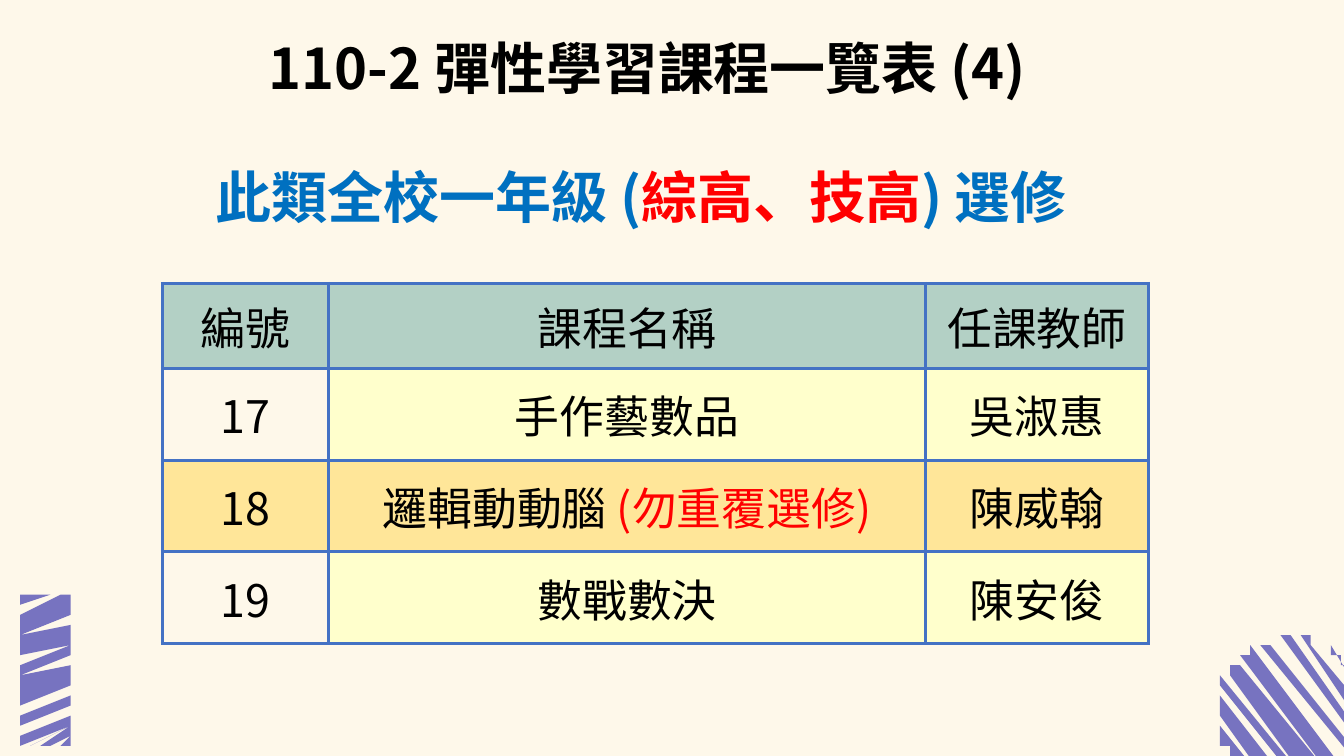
import math
from dataclasses import dataclass

from lxml import etree
from pptx import Presentation
from pptx.dml.color import RGBColor
from pptx.enum.text import MSO_ANCHOR, MSO_AUTO_SIZE, PP_ALIGN
from pptx.oxml.ns import qn
from pptx.util import Inches, Pt

CENTER = PP_ALIGN.CENTER
TOP = MSO_ANCHOR.TOP
MIDDLE = MSO_ANCHOR.MIDDLE
NO_AUTOFIT = MSO_AUTO_SIZE.NONE

IVORY = RGBColor(0xFE, 0xF8, 0xEA)
VIOLET = RGBColor(0x77, 0x73, 0xC0)
BLACK = RGBColor(0, 0, 0)
RED = RGBColor(0xFF, 0, 0)
BLUE = RGBColor(0, 0x70, 0xC0)
BORDER_BLUE = RGBColor(0x44, 0x72, 0xC4)
SAGE = RGBColor(0xB3, 0xD0, 0xC5)
LEMON = RGBColor(0xFF, 0xFF, 0xCC)
AMBER = RGBColor(0xFF, 0xE6, 0x99)
FONT = "Noto Sans CJK SC"
UNIT = Inches(0.1)

Point = tuple[float, float]


@dataclass(frozen=True)
class Phrase:
    text: str
    color: RGBColor = BLACK


@dataclass(frozen=True)
class Area:
    column: float
    row: float
    columns: float
    rows: float

    def place(self) -> tuple[int, int, int, int]:
        return grid(self.column), grid(self.row), grid(self.columns), grid(self.rows)


@dataclass(frozen=True)
class Heading:
    area: Area
    phrases: tuple[Phrase, ...]
    line_spacing: float
    top_inset: float


@dataclass(frozen=True)
class CourseRow:
    height: float
    inset: float
    fills: tuple[RGBColor, ...]
    cells: tuple[tuple[Phrase, ...], ...]


@dataclass(frozen=True)
class Stripe:
    start: float
    width: float


TITLE = Heading(Area(17.6, 4, 93.2, 9.1), (Phrase("110-2 彈性學習課程一覽表 (4)"),), 0.9, 0.1)
AUDIENCE = Heading(
    Area(5.5, 14.1, 116.2, 10.6),
    (Phrase("此類全校一年級 (", BLUE), Phrase("綜高、技高", RED), Phrase(") 選修", BLUE)),
    1.15, 1)

COURSE_COLUMNS = (16.5, 59.2, 22.1)
PLAIN_FILLS = (IVORY, LEMON, LEMON)
COURSES = (
    CourseRow(7, 1, (SAGE,) * 3, ((Phrase("編號"),), (Phrase("課程名稱"),), (Phrase("任課教師"),))),
    CourseRow(9.1, 0.1, PLAIN_FILLS, ((Phrase("17"),), (Phrase("手作藝數品"),), (Phrase("吳淑惠"),))),
    CourseRow(9.1, 0.1, (AMBER,) * 3,
              ((Phrase("18"),), (Phrase("邏輯動動腦 "), Phrase("(勿重覆選修)", RED)), (Phrase("陳威翰"),))),
    CourseRow(9.1, 0.1, PLAIN_FILLS, ((Phrase("19"),), (Phrase("數戰數決"),), (Phrase("陳安俊"),))),
)

BAR = Area(1.8, 59, 4.8, 14.5)
BAR_SLOPE = 1.95
BAR_STRIPES = tuple(Stripe(*stripe) for stripe in (
    (57.4, 0.5), (58, 0.4), (58.6, 0.4), (59.2, 0.7), (60.1, 0.5), (60.8, 0.5), (61.5, 0.5),
    (62.2, 0.6), (63, 0.5), (63.7, 0.3), (64.3, 0.4), (64.9, 0.4), (65.5, 0.6), (66.3, 0.3),
    (66.8, 0.3), (67.3, 0.4), (67.9, 0.5), (68.6, 0.4), (69.2, 0.6), (70, 0.4), (70.6, 0.4),
    (71.3, 0.3), (71.9, 0.3), (72.5, 0.5), (73.2, 0.3)))

DISC_CENTER = (127.95, 70.6)
DISC_RADIUS = 7.35
DISC_ANGLE = math.radians(52)
DISC_STRIPES = tuple(Stripe(*stripe) for stripe in (
    (-7.35, 0.75), (-5.84, 1.07), (-4.06, 0.93), (-2.38, 1.24), (-0.29, 1.22),
    (1.72, 0.98), (3.45, 0.93), (5.17, 0.74), (6.8, 0.55)))
ARC_STEPS = 8


def grid(count: float) -> int:
    return round(count * UNIT)


def clip_rows(outline: list[Point], limit: float, side: int) -> list[Point]:
    kept: list[Point] = []
    for (x0, y0), (x1, y1) in zip(outline, outline[1:] + outline[:1]):
        inside, next_inside = side * (y0 - limit) >= 0, side * (y1 - limit) >= 0
        if inside:
            kept.append((x0, y0))
        if inside != next_inside:
            kept.append((x0 + (x1 - x0) * (limit - y0) / (y1 - y0), limit))
    return kept


def bar_outline(stripe: Stripe) -> list[Point]:
    left, right = BAR.column, BAR.column + BAR.columns
    end = stripe.start + stripe.width
    band = [(right, stripe.start), (right, end),
            (left, end + BAR_SLOPE), (left, stripe.start + BAR_SLOPE)]
    return clip_rows(clip_rows(band, BAR.row, 1), BAR.row + BAR.rows, -1)


def disc_outline(stripe: Stripe) -> list[Point]:
    low = math.asin(stripe.start / DISC_RADIUS)
    high = math.asin(min(1, (stripe.start + stripe.width) / DISC_RADIUS))
    arc = [low + (high - low) * step / ARC_STEPS for step in range(ARC_STEPS + 1)]
    turns = arc + [math.pi - turn for turn in reversed(arc)]
    return [(DISC_CENTER[0] + DISC_RADIUS * math.cos(DISC_ANGLE - turn),
             DISC_CENTER[1] + DISC_RADIUS * math.sin(DISC_ANGLE - turn)) for turn in turns]


def draw_stripes(slide, outlines: list[list[Point]]) -> None:
    builder = slide.shapes.build_freeform(*outlines[0][0], scale=float(UNIT))
    for index, outline in enumerate(outlines):
        if index:
            builder.move_to(*outline[0])
        builder.add_line_segments(outline[1:], close=True)
    ornament = builder.convert_to_shape()
    ornament.shadow.inherit = False
    ornament.fill.solid()
    ornament.fill.fore_color.rgb = VIOLET
    ornament.line.fill.background()


def write_phrases(paragraph, phrases: tuple[Phrase, ...], size: int, bold: bool) -> None:
    paragraph.alignment = CENTER
    for phrase in phrases:
        run = paragraph.add_run()
        run.text = phrase.text
        run.font.size = Pt(size)
        run.font.bold = bold
        run.font.color.rgb = phrase.color
        run.font.name = FONT
        etree.SubElement(run.font._element, qn("a:ea"), typeface=FONT)


def draw_heading(holder, heading: Heading) -> None:
    holder.left, holder.top, holder.width, holder.height = heading.area.place()
    frame = holder.text_frame
    frame.word_wrap = True
    frame.auto_size = NO_AUTOFIT
    frame.vertical_anchor = TOP
    frame.margin_left = frame.margin_right = frame.margin_bottom = grid(1)
    frame.margin_top = grid(heading.top_inset)
    paragraph = frame.paragraphs[0]
    paragraph.line_spacing = heading.line_spacing
    write_phrases(paragraph, heading.phrases, 40, True)


def outline_cell(cell) -> None:
    properties = cell._tc.get_or_add_tcPr()
    for index, edge in enumerate(("a:lnL", "a:lnR", "a:lnT", "a:lnB")):
        border = etree.Element(qn(edge), w=str(Pt(2.25)))
        fill = etree.SubElement(border, qn("a:solidFill"))
        etree.SubElement(fill, qn("a:srgbClr"), val=str(BORDER_BLUE))
        properties.insert(index, border)


def draw_courses(slide) -> None:
    area = Area(16.1, 28.1, sum(COURSE_COLUMNS), sum(course.height for course in COURSES))
    table = slide.shapes.add_table(len(COURSES), len(COURSE_COLUMNS), *area.place()).table
    table.first_row = table.horz_banding = False
    for column, width in zip(table.columns, COURSE_COLUMNS):
        column.width = grid(width)
    for row, course in zip(table.rows, COURSES):
        row.height = grid(course.height)
        for cell, fill, phrases in zip(row.cells, course.fills, course.cells):
            cell.fill.solid()
            cell.fill.fore_color.rgb = fill
            cell.vertical_anchor = MIDDLE
            cell.margin_left = cell.margin_right = grid(course.inset)
            cell.margin_top = cell.margin_bottom = grid(course.inset)
            write_phrases(cell.text_frame.paragraphs[0], phrases, 32, False)
            outline_cell(cell)


def main() -> None:
    deck = Presentation()
    deck.slide_width, deck.slide_height = Inches(13.33), Inches(7.5)
    slide = deck.slides.add_slide(deck.slide_layouts[5])
    slide.background.fill.solid()
    slide.background.fill.fore_color.rgb = IVORY
    draw_stripes(slide, [disc_outline(stripe) for stripe in DISC_STRIPES])
    draw_stripes(slide, [bar_outline(stripe) for stripe in BAR_STRIPES])
    draw_courses(slide)
    draw_heading(slide.shapes.add_textbox(*AUDIENCE.area.place()), AUDIENCE)
    draw_heading(slide.shapes.title, TITLE)
    deck.save("out.pptx")


if __name__ == "__main__":
    main()
